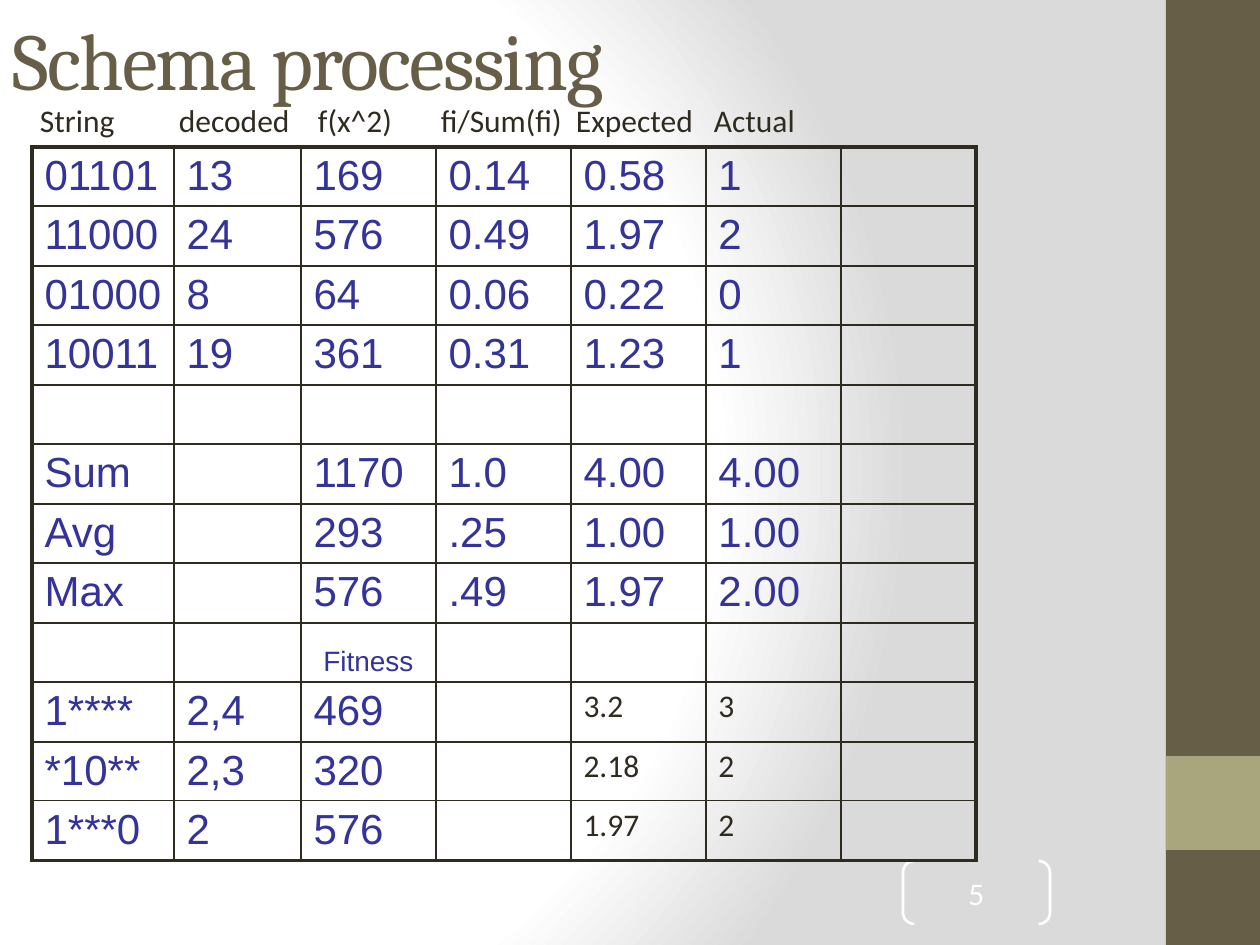
import pptx
import pptx.util
import pptx.dml.color
import pptx.enum.shapes
import pptx.enum.text
import pptx.oxml
import pptx.oxml.ns
import lxml.etree

RGBColor = pptx.dml.color.RGBColor
BROWN = RGBColor(0x67, 0x5E, 0x47)
OLIVE = RGBColor(0xA9, 0xA5, 0x7C)
INK = RGBColor(0x2F, 0x2B, 0x20)
NAVY = RGBColor(0x33, 0x33, 0x99)
WHITE = RGBColor(0xFF, 0xFF, 0xFF)
SILVER = RGBColor(0xDA, 0xDA, 0xDA)

SHAPES = pptx.enum.shapes.MSO_SHAPE
ALIGN = pptx.enum.text.PP_ALIGN
ANCHOR = pptx.enum.text.MSO_ANCHOR
qn = pptx.oxml.ns.qn
PX_PER_INCH = 126

HEADINGS = ["String", "decoded", "f(x^2)", "fi/Sum(fi)", "Expected", "Actual"]
HEADING_TABS = [139, 278, 401, 536, 674]
SCHEMA_ROWS = [
    ["01101", "13", "169", "0.14", "0.58", "1", ""],
    ["11000", "24", "576", "0.49", "1.97", "2", ""],
    ["01000", "8", "64", "0.06", "0.22", "0", ""],
    ["10011", "19", "361", "0.31", "1.23", "1", ""],
    [""] * 7,
    ["Sum", "", "1170", "1.0", "4.00", "4.00", ""],
    ["Avg", "", "293", ".25", "1.00", "1.00", ""],
    ["Max", "", "576", ".49", "1.97", "2.00", ""],
    ["", "", "Fitness", "", "", "", ""],
    ["1****", "2,4", "469", "", "3.2", "3", ""],
    ["*10**", "2,3", "320", "", "2.18", "2", ""],
    ["1***0", "2", "576", "", "1.97", "2", ""],
]
COLUMN_WIDTHS = [142, 127] + [135] * 5
ROW_HEIGHTS = [59, 60] * 6
FITNESS_ROW = 8


def px(length):
    return pptx.util.Emu(round(length * 914400 / PX_PER_INCH))


def write_text(frame, text, size=18, font="Calibri", color=INK,
               align=ALIGN.LEFT, spacing=None):
    paragraph = frame.paragraphs[0]
    paragraph.alignment = align
    run = paragraph.add_run()
    run.text = text
    run.font.size = pptx.util.Pt(size)
    run.font.name = font
    run.font.color.rgb = color
    if spacing is not None:
        run.font._element.set("spc", str(spacing))
    return paragraph


class SlideBuilder:
    def __init__(self, slide, line_color):
        self.slide = slide
        self.line_color = line_color

    def background(self, stops):
        self.slide.background.fill.solid()
        solid = self.slide.background._cSld.find(".//" + qn("a:solidFill"))
        stop_xml = "".join(
            f'<a:gs pos="{position * 1000}"><a:srgbClr val="{color}"/></a:gs>'
            for position, color in stops)
        gradient = pptx.oxml.parse_xml(
            f'<a:gradFill {pptx.oxml.ns.nsdecls("a")} rotWithShape="1">'
            f'<a:gsLst>{stop_xml}</a:gsLst><a:path path="circle">'
            '<a:fillToRect l="20000" t="50000" r="100000" b="50000"/>'
            '</a:path></a:gradFill>')
        solid.getparent().replace(solid, gradient)

    def title(self, text, left, top, width, height, **style):
        title = self.slide.shapes.title
        title.left, title.top = px(left), px(top)
        title.width, title.height = px(width), px(height)
        frame = title.text_frame
        frame.auto_size = pptx.enum.text.MSO_AUTO_SIZE.NONE
        frame.vertical_anchor = ANCHOR.MIDDLE
        write_text(frame, text, **style)

    def band(self, left, top, width, height, color):
        band = self.slide.shapes.add_shape(
            SHAPES.RECTANGLE, px(left), px(top), px(width), px(height))
        band.shadow.inherit = False
        band.fill.solid()
        band.fill.fore_color.rgb = color
        band.line.fill.background()

    def page_number(self, text, left, top, width, height, color):
        brackets = self.slide.shapes.add_shape(
            SHAPES.DOUBLE_BRACKET, px(left), px(top), px(width), px(height))
        brackets.shadow.inherit = False
        brackets.adjustments[0] = 0.18
        brackets.fill.background()
        brackets.line.color.rgb = color
        brackets.line.width = pptx.util.Pt(1.5)
        frame = brackets.text_frame
        frame.margin_left = frame.margin_right = 0
        frame.margin_top = frame.margin_bottom = 0
        frame.vertical_anchor = ANCHOR.MIDDLE
        write_text(frame, text, color=color, align=ALIGN.CENTER)

    def heading_line(self, headings, tabs, left, top, width, height):
        box = self.slide.shapes.add_textbox(
            px(left), px(top), px(width), px(height))
        frame = box.text_frame
        frame.word_wrap = True
        frame.margin_left = px(19)
        properties = write_text(frame, "\t".join(headings))._p.get_or_add_pPr()
        tab_list = lxml.etree.SubElement(properties, qn("a:tabLst"))
        for position in tabs:
            lxml.etree.SubElement(
                tab_list, qn("a:tab"), pos=str(px(position)), algn="l")

    def borders(self, cell, widths):
        properties = cell._tc.get_or_add_tcPr()
        for index, (side, width) in enumerate(widths.items()):
            properties.insert(index, pptx.oxml.parse_xml(
                f'<a:ln{side} {pptx.oxml.ns.nsdecls("a")} '
                f'w="{pptx.util.Pt(width)}"><a:solidFill>'
                f'<a:srgbClr val="{self.line_color}"/>'
                f'</a:solidFill></a:ln{side}>'))

    def table(self, rows, column_widths, row_heights, left, top, cell_style):
        last_row, last_column = len(rows) - 1, len(column_widths) - 1
        table = self.slide.shapes.add_table(
            len(rows), len(column_widths), px(left), px(top),
            px(sum(column_widths)), px(sum(row_heights))).table
        table.first_row = table.horz_banding = False
        for column, width in zip(table.columns, column_widths):
            column.width = px(width)
        for r, values in enumerate(rows):
            table.rows[r].height = px(row_heights[r])
            for c, value in enumerate(values):
                cell = table.cell(r, c)
                cell.margin_top, cell.margin_bottom = px(6), px(4)
                cell.fill.background()
                self.borders(cell, {
                    "L": 2.25 if c == 0 else 1,
                    "R": 2.25 if c == last_column else 1,
                    "T": 2.25 if r == 0 else 1,
                    "B": 2.25 if r == last_row else 1})
                if value:
                    anchor, style = cell_style(r, c)
                    cell.vertical_anchor = anchor
                    write_text(cell.text_frame, value, **style)


def schema_cell_style(row, column):
    if row == FITNESS_ROW:
        return ANCHOR.BOTTOM, dict(
            size=16, font="Arial", color=NAVY, align=ALIGN.CENTER)
    if row > FITNESS_ROW and column > 3:
        return ANCHOR.TOP, {}
    return ANCHOR.TOP, dict(size=24, font="Arial", color=NAVY)


def main():
    deck = pptx.Presentation()
    deck.slide_width, deck.slide_height = px(1260), px(945)
    builder = SlideBuilder(deck.slides.add_slide(deck.slide_layouts[5]), INK)
    builder.background([(0, WHITE), (75, WHITE), (100, SILVER)])
    builder.band(1166, 0, 94, 945, BROWN)
    builder.band(1166, 756, 94, 94, OLIVE)
    builder.page_number("5", 903, 861, 147, 63, WHITE)
    builder.title("Schema processing", 0, 0, 1187, 116,
                  size=46, font="Cambria", color=BROWN, spacing=-100)
    builder.table(SCHEMA_ROWS, COLUMN_WIDTHS, ROW_HEIGHTS, 32, 147,
                  schema_cell_style)
    builder.heading_line(HEADINGS, HEADING_TABS, 21, 95, 1144, 50)
    deck.save("out.pptx")


if __name__ == "__main__":
    main()
